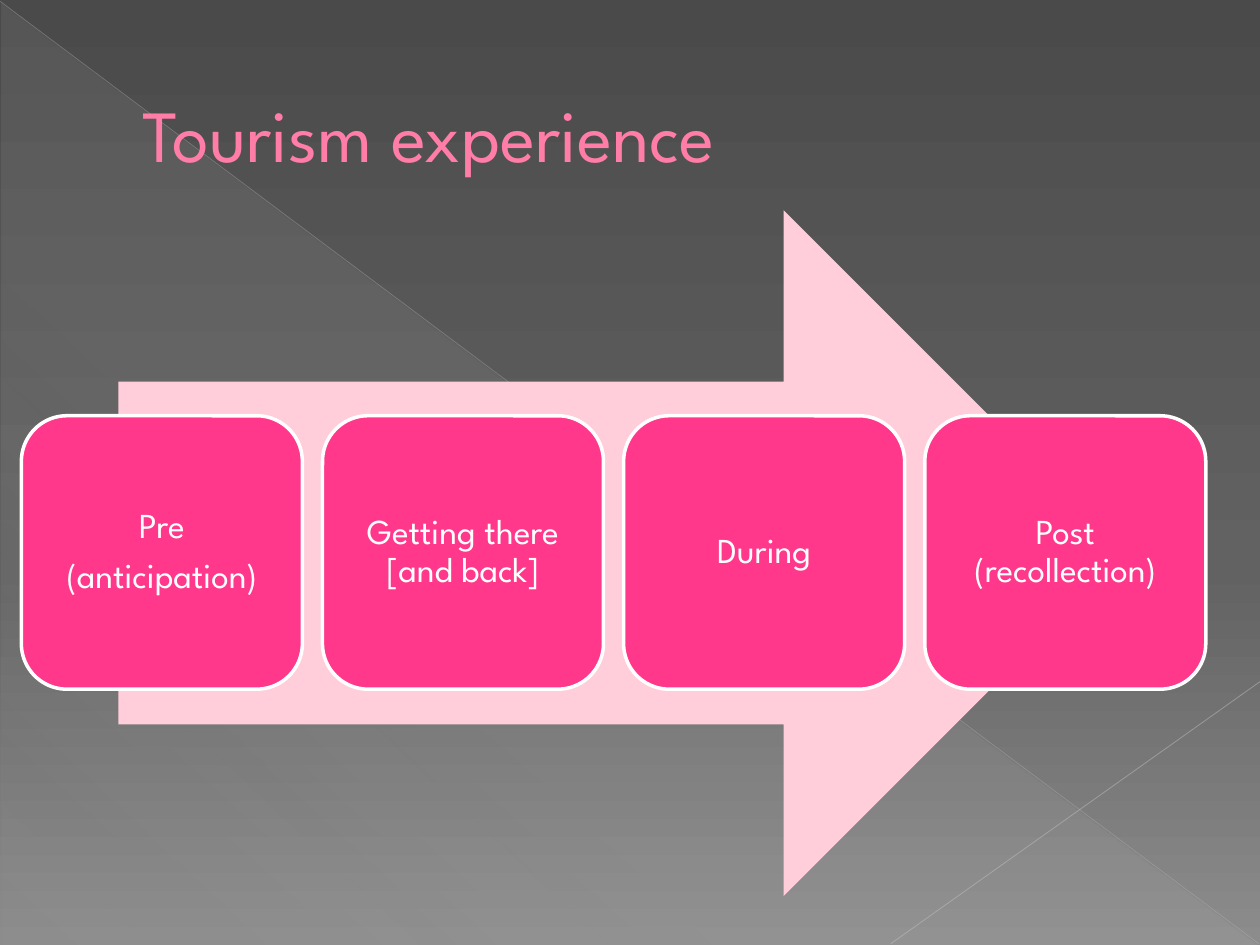
from lxml import etree
from pptx import Presentation
from pptx.dml.color import RGBColor
from pptx.enum.shapes import MSO_CONNECTOR, MSO_SHAPE
from pptx.enum.text import MSO_ANCHOR, PP_ALIGN
from pptx.oxml.ns import qn
from pptx.util import Inches, Pt

TITLE = "Tourism experience"
STAGES = [
    ["Pre", "(anticipation)"],
    ["Getting there [and back]"],
    ["During"],
    ["Post (recollection)"],
]

FONT = "League Spartan"
WHITE = RGBColor(0xFF, 0xFF, 0xFF)
TITLE_PINK = RGBColor(0xFF, 0x7D, 0xA7)
ARROW_PINK = RGBColor(0xFF, 0xCE, 0xDA)
STAGE_PINK = RGBColor(0xFF, 0x38, 0x8C)
GREY = RGBColor(0xD2, 0xD2, 0xD2)
LONG_LINE = RGBColor(0xBF, 0xBF, 0xBF)
SHORT_LINE = RGBColor(0xC6, 0xC6, 0xC6)

# Gradient stops: position %, colour, opacity %
BACKDROP = [
    (0, RGBColor(0x4A, 0x4A, 0x4A), 100),
    (60, RGBColor(0x62, 0x62, 0x62), 100),
    (100, RGBColor(0x8C, 0x8C, 0x8C), 100),
]
SHEEN = [(0, GREY, 10), (70, GREY, 8), (100, GREY, 1)]

# Start, end, colour, width in points, opacity %
DIAGONALS = [
    ((0, 0.01), (9.99, 7.49), LONG_LINE, 0.39, 35),
    ((10, 5.41), (7.07, 7.49), SHORT_LINE, 0.47, 45),
]

STAGE_LEFT, STAGE_TOP, STAGE_WIDTH, STAGE_HEIGHT = 0.17, 3.3, 2.23, 2.17
STAGE_PITCH = 2.39


def set_format(target, values):
    for name, value in values.items():
        setattr(target, name, value)


def add_alpha(colour, opacity):
    etree.SubElement(colour, qn("a:alpha"), val=str(opacity * 1000))


def set_gradient(fill, element, stops, angle):
    """Give a fill any number of stops; angle is clockwise in degrees."""
    fill.solid()
    solid = next(element.iter(qn("a:solidFill")))
    gradient = etree.Element(qn("a:gradFill"), rotWithShape="1")
    stop_list = etree.SubElement(gradient, qn("a:gsLst"))
    for position, colour, opacity in stops:
        stop = etree.SubElement(stop_list, qn("a:gs"), pos=str(position * 1000))
        shade = etree.SubElement(stop, qn("a:srgbClr"), val=str(colour))
        if opacity < 100:
            add_alpha(shade, opacity)
    etree.SubElement(gradient, qn("a:lin"), ang=str(angle * 60000), scaled="0")
    solid.getparent().replace(solid, gradient)


def add_shape(page, kind, left, top, width, height, colour=None):
    shape = page.shapes.add_shape(
        kind, Inches(left), Inches(top), Inches(width), Inches(height))
    shape.shadow.inherit = False
    shape.line.fill.background()
    if colour is not None:
        shape.fill.solid()
        shape.fill.fore_color.rgb = colour
    return shape


def add_diagonal(page, start, end, colour, width, opacity):
    line = page.shapes.add_connector(
        MSO_CONNECTOR.STRAIGHT, *(Inches(value) for value in start + end))
    line.line.color.rgb = colour
    line.line.width = Pt(width)
    properties = line._element.spPr
    add_alpha(next(properties.iter(qn("a:srgbClr"))), opacity)
    etree.SubElement(properties, qn("a:effectLst"))


def write(para, text, size, colour):
    span = para.add_run()
    span.text = text
    set_format(span.font, {"name": FONT, "size": Pt(size)})
    span.font.color.rgb = colour


def add_title(page):
    title = page.shapes.title
    page.shapes._spTree.append(title._element)  # in front of the backdrop
    set_format(title, {"left": Inches(0.5), "top": Inches(0.29),
                       "width": Inches(9), "height": Inches(1.53)})
    title.text_frame.vertical_anchor = MSO_ANCHOR.MIDDLE
    para = title.text_frame.paragraphs[0]
    para.alignment = PP_ALIGN.LEFT
    para._p.get_or_add_pPr().set("marL", str(Inches(0.53)))
    write(para, TITLE, 42, TITLE_PINK)


def add_stage(page, index, lines):
    box = add_shape(page, MSO_SHAPE.ROUNDED_RECTANGLE,
                    STAGE_LEFT + index * STAGE_PITCH, STAGE_TOP,
                    STAGE_WIDTH, STAGE_HEIGHT, STAGE_PINK)
    box.line.color.rgb = WHITE
    box.line.width = Pt(2)
    frame = box.text_frame
    margins = {f"margin_{side}": Inches(0.08)
               for side in ("left", "top", "right", "bottom")}
    set_format(frame, {"word_wrap": True,
                       "vertical_anchor": MSO_ANCHOR.MIDDLE, **margins})
    for number, text in enumerate(lines):
        para = frame.add_paragraph() if number else frame.paragraphs[0]
        set_format(para, {"alignment": PP_ALIGN.CENTER,
                          "line_spacing": 0.9, "space_after": Pt(7)})
        write(para, text, 20, WHITE)


def main():
    deck = Presentation()
    set_format(deck, {"slide_width": Inches(10), "slide_height": Inches(7.5)})
    page = deck.slides.add_slide(deck.slide_layouts[5])
    set_gradient(page.background.fill, page._element, BACKDROP, 90)

    sheen = add_shape(page, MSO_SHAPE.RIGHT_TRIANGLE, 0.01, 0.02, 9.98, 7.48)
    set_gradient(sheen.fill, sheen._element.spPr, SHEEN, 133)
    for diagonal in DIAGONALS:
        add_diagonal(page, *diagonal)

    add_title(page)
    add_shape(page, MSO_SHAPE.RIGHT_ARROW, 0.94, 1.67, 8, 5.44, ARROW_PINK)
    for index, lines in enumerate(STAGES):
        add_stage(page, index, lines)
    deck.save("out.pptx")


if __name__ == "__main__":
    main()
